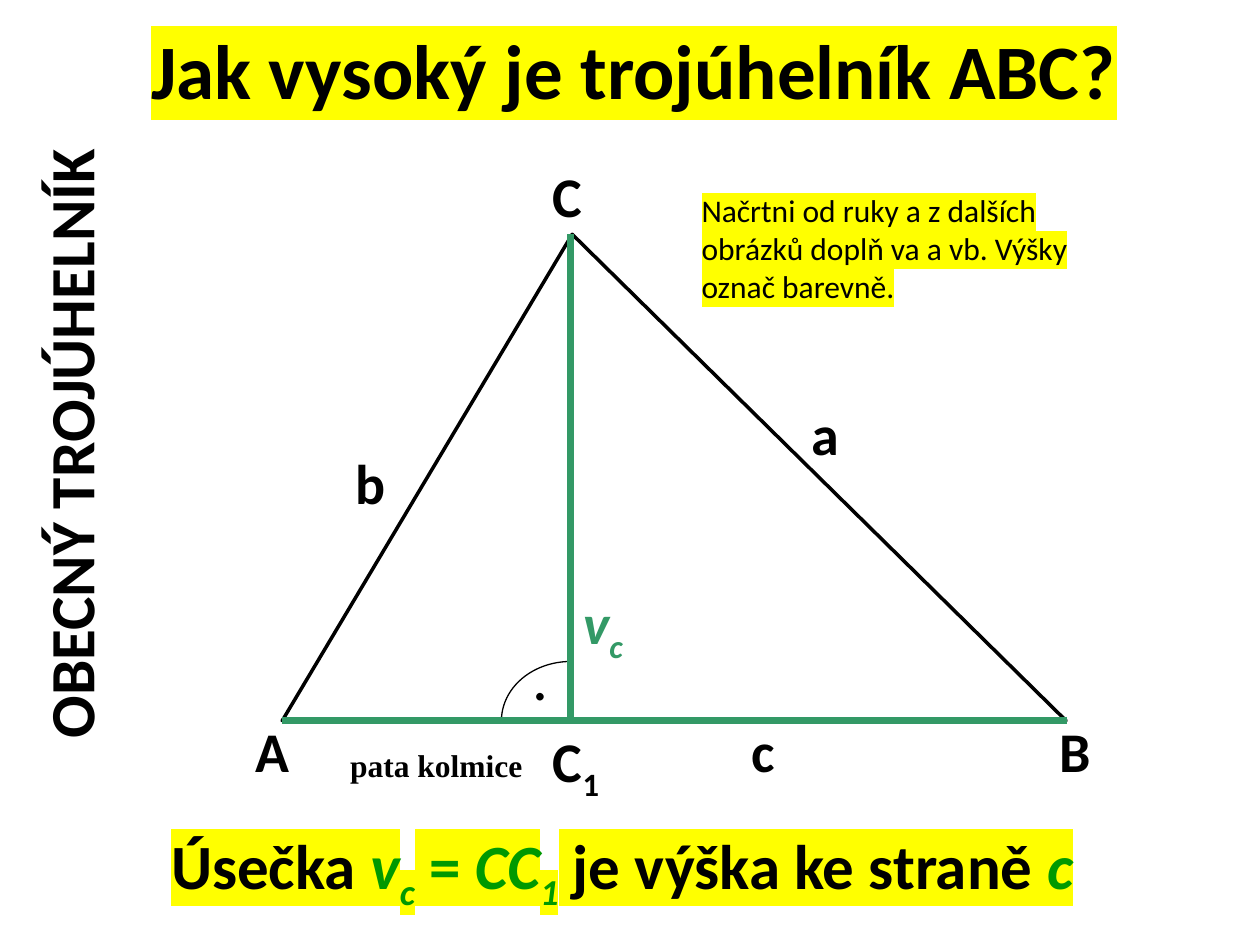
import pptx
import pptx.util
import pptx.dml.color
import pptx.enum.shapes
import pptx.enum.text
import pptx.oxml
import pptx.oxml.ns
from pptx.util import Inches

BLACK = pptx.dml.color.RGBColor(0, 0, 0)
YELLOW = pptx.dml.color.RGBColor(0xFF, 0xFF, 0)
SEA_GREEN = pptx.dml.color.RGBColor(0x33, 0x99, 0x66)
GREEN = pptx.dml.color.RGBColor(0, 0x99, 0)
SHAPE = pptx.enum.shapes.MSO_SHAPE
NS = pptx.oxml.ns.nsdecls("a")


def add_run(p, text, size=32, color=BLACK, bold=True, italic=False,
            sub=False, highlight=None, font="Calibri"):
    r = p.add_run()
    r.text = text
    r.font.size = pptx.util.Pt(size)
    r.font.bold = bold
    r.font.italic = italic
    r.font.color.rgb = color
    r.font.name = font
    rPr = r.font._element
    if sub:
        rPr.set("baseline", "-25000")
    if highlight is not None:
        rPr.find(pptx.oxml.ns.qn("a:solidFill")).addnext(pptx.oxml.parse_xml(
            f'<a:highlight {NS}><a:srgbClr val="{highlight}"/></a:highlight>'))


def text_box(left, top, width, height, wrap=True):
    sp = slide.shapes.add_textbox(Inches(left), Inches(top), Inches(width), Inches(height))
    sp.text_frame.word_wrap = wrap
    return sp.text_frame


prs = pptx.Presentation()
prs.slide_width, prs.slide_height = Inches(10), Inches(7.5)
slide = prs.slides.add_slide(prs.slide_layouts[5])

title = slide.shapes.title
title.left, title.top = Inches(1.1), Inches(0.13)
title.width, title.height = Inches(7.94), Inches(0.84)
tf = title.text_frame
tf.word_wrap = False
tf.auto_size = pptx.enum.text.MSO_AUTO_SIZE.NONE
tf.vertical_anchor = pptx.enum.text.MSO_ANCHOR.TOP
p = tf.paragraphs[0]
p.alignment = pptx.enum.text.PP_ALIGN.LEFT
add_run(p, "Jak vysoký je trojúhelník ABC?", size=44, highlight=YELLOW)

tf = text_box(0.2, 0.68, 0.81, 5.28)
tf._txBody.bodyPr.set("vert", "vert270")
add_run(tf.paragraphs[0], "OBECNÝ TROJÚHELNÍK", size=36)

triangle = slide.shapes.add_shape(
    SHAPE.ISOSCELES_TRIANGLE, Inches(2.24), Inches(1.86), Inches(6.22), Inches(3.86))
triangle.adjustments[0] = 0.37
arc = slide.shapes.add_shape(SHAPE.ARC, Inches(3.98), Inches(5.25), Inches(1.1), Inches(0.94))
arc.adjustments[0] = 108
arc.adjustments[1] = 162
for sp, width in ((triangle, 2), (arc, 0.75)):
    sp.shadow.inherit = False
    sp.fill.background()
    sp.line.color.rgb = BLACK
    sp.line.width = pptx.util.Pt(width)

for x1, y1, x2, y2 in ((4.53, 1.86, 4.53, 5.72), (2.24, 5.72, 8.47, 5.72)):
    line = slide.shapes.add_connector(
        pptx.enum.shapes.MSO_CONNECTOR.STRAIGHT,
        Inches(x1), Inches(y1), Inches(x2), Inches(y2))
    line.line.color.rgb = SEA_GREEN
    line.line.width = pptx.util.Pt(4)
    line._element.spPr.append(pptx.oxml.parse_xml(f"<a:effectLst {NS}/>"))

for label, left, top in (("A", 1.93, 5.64), ("B", 8.31, 5.64), ("C", 4.29, 1.23),
                         ("b", 2.72, 3.51), ("c", 5.87, 5.64), ("a", 6.34, 3.12)):
    add_run(text_box(left, top, 0.63, 0.63).paragraphs[0], label)

add_run(text_box(4.13, 5.01, 0.71, 0.7).paragraphs[0], ".", size=36, bold=False)

p = text_box(4.53, 4.62, 0.61, 0.63).paragraphs[0]
add_run(p, "v", color=SEA_GREEN, italic=True)
add_run(p, "c", color=SEA_GREEN, italic=True, sub=True)

p = text_box(4.29, 5.72, 0.87, 0.63).paragraphs[0]
add_run(p, "C")
add_run(p, "1", sub=True)

p = text_box(1.26, 6.51, 9.21, 0.71).paragraphs[0]
for text, color, italic, sub in (
        ("Úsečka ", BLACK, False, False),
        ("v", GREEN, True, False),
        ("c", GREEN, True, True),
        (" ", GREEN, True, False),
        ("= ", GREEN, False, False),
        ("CC", GREEN, True, False),
        ("1", GREEN, True, True),
        (" je výška ke straně ", BLACK, False, False),
        ("c", GREEN, True, False)):
    add_run(p, text, size=36, color=color, italic=italic, sub=sub, highlight=YELLOW)

tf = text_box(2.68, 5.87, 1.65, 0.4, wrap=False)
add_run(tf.paragraphs[0], "pata kolmice", size=18, font="Times New Roman")

tf = text_box(5.47, 1.47, 3.56, 1.01)
add_run(tf.paragraphs[0],
        "Načrtni od ruky a z dalších obrázků doplň va a vb. Výšky označ barevně.",
        size=18, bold=False, highlight=YELLOW)

prs.save("out.pptx")
